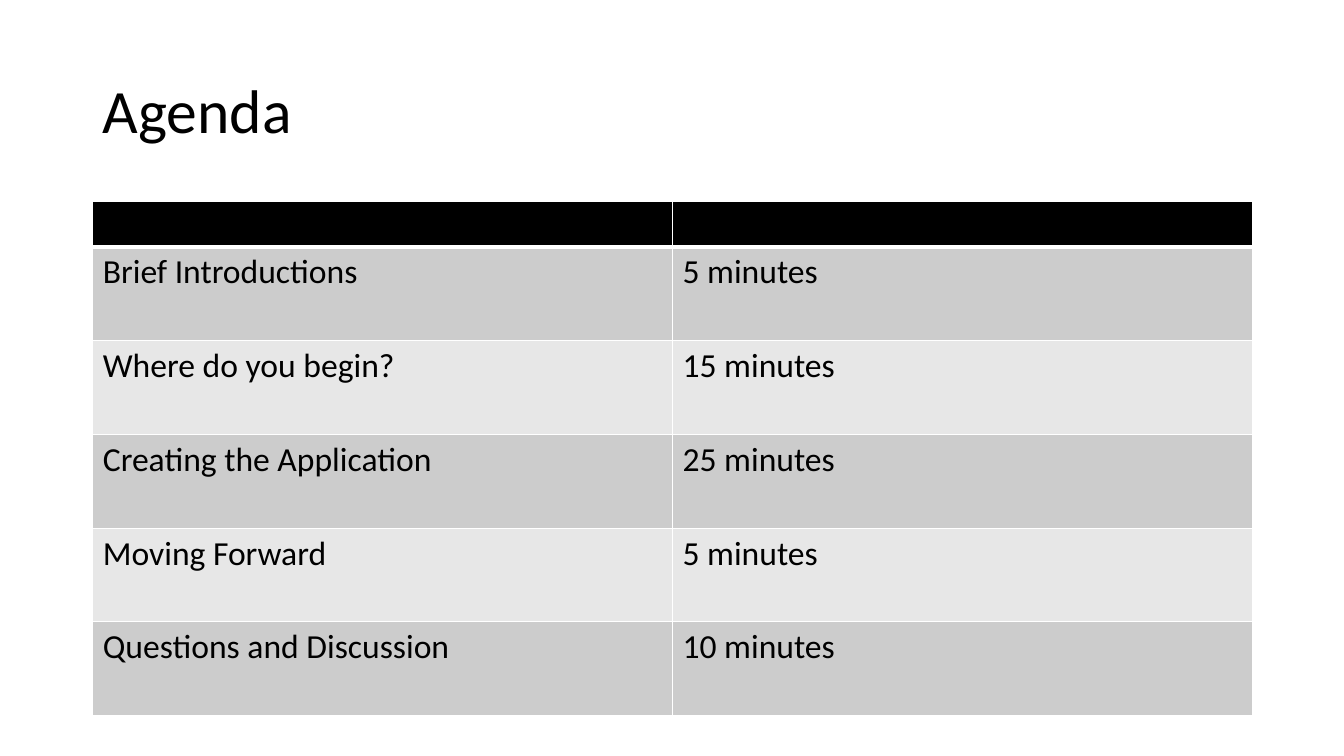
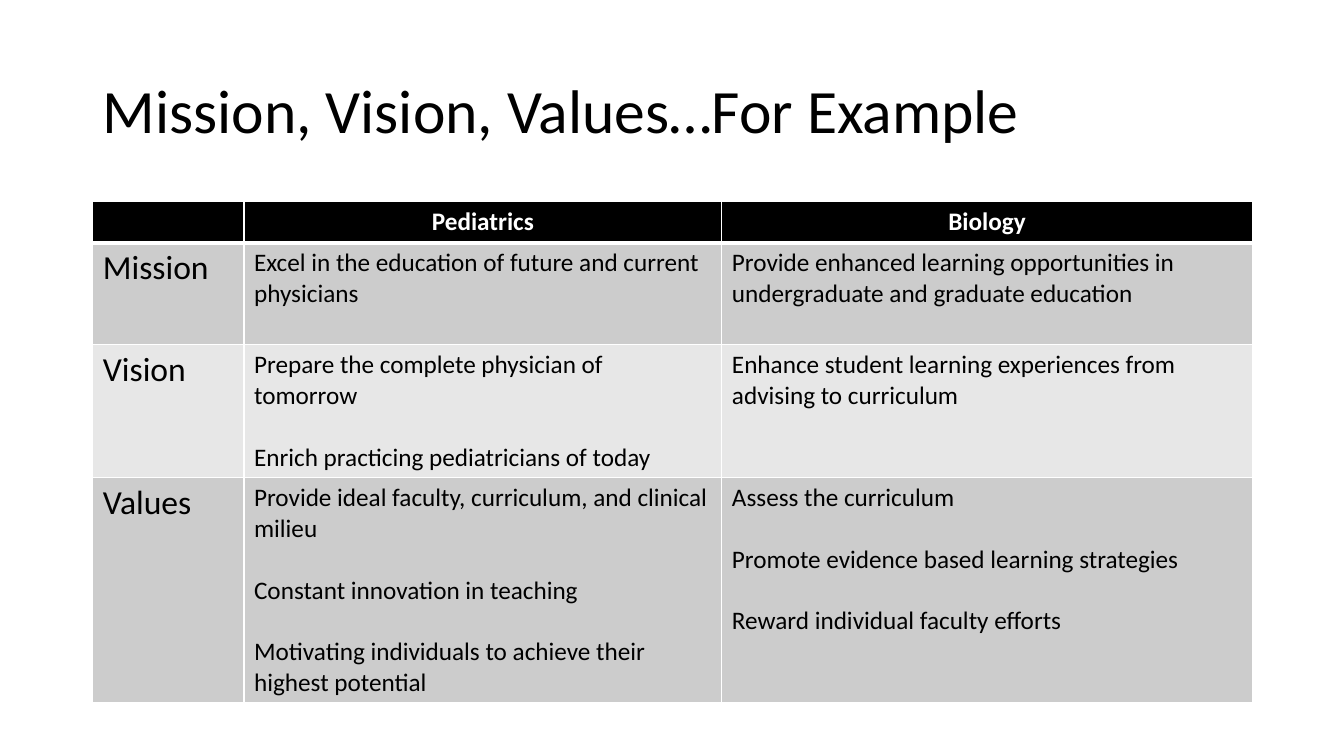
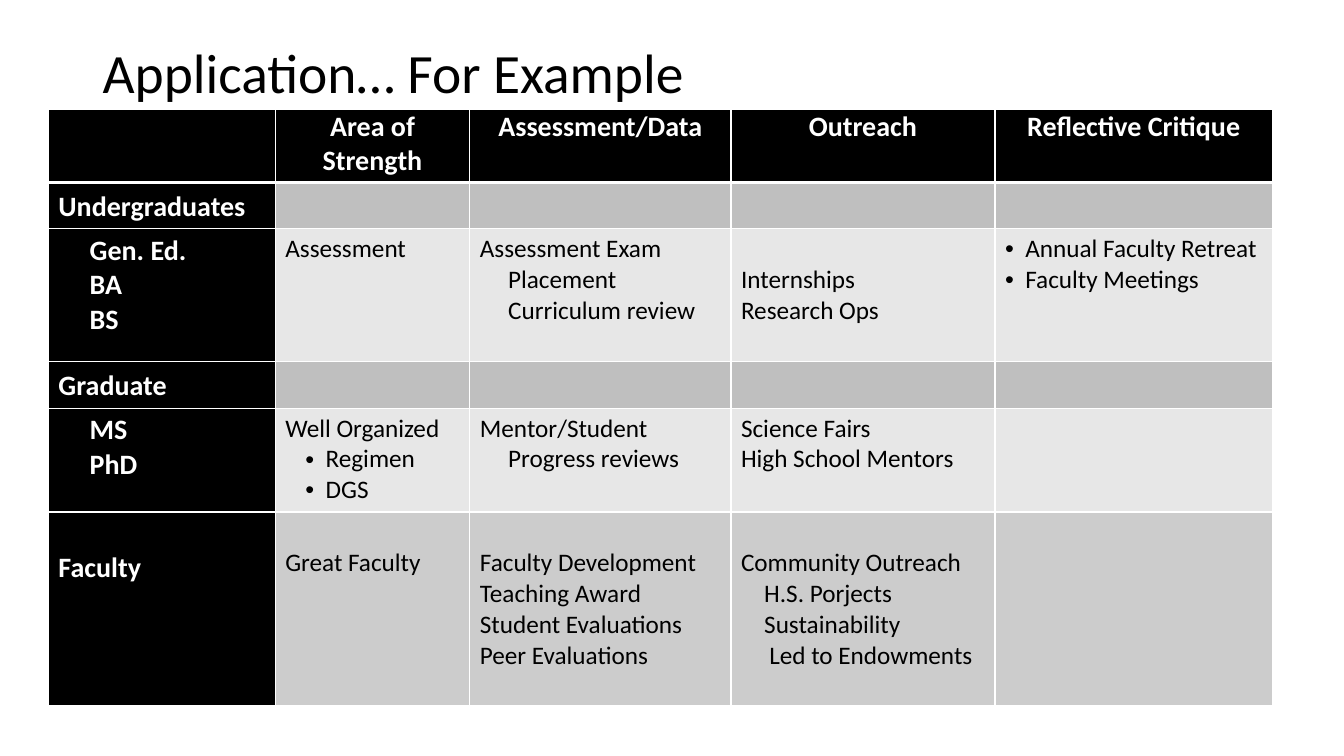
"""Build three slides on preparing an application: agenda, mission table, worked example."""
from collections import namedtuple
from dataclasses import dataclass

from lxml import etree
from pptx import Presentation
from pptx.dml.color import RGBColor
from pptx.enum.text import MSO_ANCHOR, PP_ALIGN
from pptx.oxml.ns import qn
from pptx.util import Inches, Pt

MIDDLE = MSO_ANCHOR.MIDDLE
LEFT, CENTER = PP_ALIGN.LEFT, PP_ALIGN.CENTER


@dataclass(frozen=True)
class Theme:
    font: str = "Calibri"
    black: str = "000000"
    white: str = "FFFFFF"
    dark_band: str = "CCCCCC"
    light_band: str = "E7E7E7"
    section_band: str = "BFBFBF"
    title: float = 44
    small_title: float = 39.6
    large: float = 24
    label: float = 20
    body: float = 18
    line_height: float = 1.22
    thin: float = 1
    thick: float = 3


THEME = Theme()
SLIDE_WIDTH, SLIDE_HEIGHT = 13.33, 7.5
MARGIN, CONTENT_WIDTH, TITLE_TOP, TABLE_TOP = 0.92, 11.5, 0.4, 2
CELL_TOP = 0.05

Line = namedtuple("Line", "text left hanging", defaults=(0, 0))
Look = namedtuple("Look", "size color bold align", defaults=(False, LEFT))

plain_large = Look(THEME.large, THEME.black)
plain_body = Look(THEME.body, THEME.black)
label_white = Look(THEME.label, THEME.white, True)
bands = [THEME.black, THEME.dark_band, THEME.light_band]

agenda = dict(
    title="Agenda", title_size=THEME.title, title_height=1.45,
    left=MARGIN, top=TABLE_TOP,
    columns=[CONTENT_WIDTH / 2] * 2, heights=[0.45] + [0.93] * 5,
    fills=bands + bands[1:] + bands[1:2],
    header=plain_large, first=plain_large, body=plain_large,
    rows=[
        [[], []],
        [["Brief Introductions"], ["5 minutes"]],
        [["Where do you begin?"], ["15 minutes"]],
        [["Creating the Application"], ["25 minutes"]],
        [["Moving Forward"], ["5 minutes"]],
        [["Questions and Discussion"], ["10 minutes"]],
    ],
)

mission = dict(
    title="Mission, Vision, Values…For Example", title_size=THEME.title, title_height=1.45,
    left=MARGIN, top=TABLE_TOP,
    columns=[1.5, 4.74, 5.26], heights=[0.41, 1.01, 1.32, 2.23],
    fills=bands + bands[1:2],
    header=Look(THEME.body, THEME.white, True, CENTER), first=plain_large, body=plain_body,
    gap=THEME.body * THEME.line_height,
    rows=[
        [[], ["Pediatrics"], ["Biology"]],
        [["Mission"],
         ["Excel in the education of future and current physicians"],
         ["Provide enhanced learning opportunities in undergraduate and graduate education"]],
        [["Vision"],
         ["Prepare the complete physician of tomorrow",
          "Enrich practicing pediatricians of today"],
         ["Enhance student learning experiences from advising to curriculum"]],
        [["Values"],
         ["Provide ideal faculty, curriculum, and clinical milieu",
          "Constant innovation in teaching",
          "Motivating individuals to achieve their highest potential"],
         ["Assess the curriculum", "Promote evidence based learning strategies",
          "Reward individual faculty efforts"]],
    ],
)

application = dict(
    title="Application… For Example", title_size=THEME.small_title, title_height=0.69,
    left=0.48, top=1.09,
    columns=[2.25, 1.93, 2.59, 2.62, 2.75], heights=[0.72, 0.46, 1.32, 0.46, 1.03, 1.92],
    fills=[THEME.black] + [THEME.section_band, THEME.light_band] * 2 + [THEME.dark_band],
    header=Look(THEME.label, THEME.white, True, CENTER), first=label_white, body=plain_body,
    first_fill=THEME.black, header_insets=(0.07, 0), sections=(1, 3),
    lowered={(2, 3), (5, 0), (5, 1), (5, 2), (5, 3)},
    rows=[
        [[], ["Area of Strength"], ["Assessment/Data"], ["Outreach"], ["Reflective Critique"]],
        [["Undergraduates"], [], [], [], []],
        [[Line("Gen. Ed.", 0.31), Line("BA", 0.31), Line("BS", 0.31)],
         ["Assessment"],
         ["Assessment Exam", Line("Placement", 0.28), Line("Curriculum review", 0.28)],
         ["Internships", "Research Ops"],
         [Line("Annual Faculty Retreat", 0.2, 0.2), Line("Faculty Meetings", 0.2, 0.2)]],
        [["Graduate"], [], [], [], []],
        [[Line("MS", 0.31), Line("PhD", 0.31)],
         ["Well Organized", Line("Regimen", 0.4, 0.2), Line("DGS", 0.4, 0.2)],
         ["Mentor/Student", Line("Progress reviews", 0.28)],
         ["Science Fairs", "High School Mentors"],
         []],
        [["Faculty"],
         ["Great Faculty"],
         ["Faculty Development", "Teaching Award", "Student Evaluations", "Peer Evaluations"],
         ["Community Outreach", Line("H.S. Porjects", 0.23), Line("Sustainability", 0.23),
          Line("Led to Endowments", 0.28)],
         []],
    ],
)


def write(para, line, look):
    """Fill one paragraph with a line of text, its indent and its look."""
    para.text = line.text
    para.alignment = look.align
    for span in para.runs:
        span.font.name = THEME.font
        span.font.size = Pt(look.size)
        span.font.bold = look.bold
        span.font.color.rgb = RGBColor.from_string(look.color)
    if line.left:
        properties = para._p.get_or_add_pPr()
        properties.set("marL", str(Inches(line.left)))
        properties.set("indent", str(-Inches(line.hanging)))
        if line.hanging:
            etree.SubElement(properties, qn("a:buFont"), typeface="Arial")
            etree.SubElement(properties, qn("a:buChar"), char="•")


def paint(cell, fill, top_width, bottom_width):
    """Give a cell its white borders and its solid fill."""
    properties = cell._tc.get_or_add_tcPr()
    widths = dict(lnL=THEME.thin, lnR=THEME.thin, lnT=top_width, lnB=bottom_width)
    for side, width in widths.items():
        border = etree.SubElement(properties, qn(f"a:{side}"), w=str(Pt(width)))
        solid = etree.SubElement(border, qn("a:solidFill"))
        etree.SubElement(solid, qn("a:srgbClr"), val=THEME.white)
    cell.fill.solid()
    cell.fill.fore_color.rgb = RGBColor.from_string(fill)


deck = Presentation()
deck.slide_width, deck.slide_height = Inches(SLIDE_WIDTH), Inches(SLIDE_HEIGHT)
blank = deck.slide_layouts[6]

for page in (agenda, mission, application):
    slide = deck.slides.add_slide(blank)
    box = slide.shapes.add_textbox(
        Inches(MARGIN), Inches(TITLE_TOP), Inches(CONTENT_WIDTH), Inches(page["title_height"]))
    box.text_frame.word_wrap = True
    box.text_frame.vertical_anchor = MIDDLE
    heading = box.text_frame.paragraphs[0]
    write(heading, Line(page["title"]), Look(page["title_size"], THEME.black))
    heading.line_spacing = 0.9

    columns, heights = page["columns"], page["heights"]
    table = slide.shapes.add_table(
        len(heights), len(columns), Inches(page["left"]), Inches(page["top"]),
        Inches(sum(columns)), Inches(sum(heights))).table
    table.horz_banding = False
    for column, width in zip(table.columns, columns):
        column.width = Inches(width)
    for row, height in zip(table.rows, heights):
        row.height = Inches(height)

    for r, cells in enumerate(page["rows"]):
        for c, lines in enumerate(cells):
            cell = table.cell(r, c)
            look = page["header"] if r == 0 else page["first"] if c == 0 else page["body"]
            fill = page.get("first_fill", page["fills"][r]) if c == 0 else page["fills"][r]
            paint(cell, fill,
                  THEME.thick if r == 1 else THEME.thin,
                  THEME.thick if r == 0 else THEME.thin)
            if r == 0 and "header_insets" in page:
                side, edge = page["header_insets"]
                cell.margin_left = cell.margin_right = Inches(side)
                cell.margin_top = cell.margin_bottom = Inches(edge)
            if (r, c) in page.get("lowered", ()):
                cell.margin_top = Inches(CELL_TOP) + Pt(look.size * THEME.line_height)
            for index, line in enumerate(lines):
                frame = cell.text_frame
                para = frame.add_paragraph() if index else frame.paragraphs[0]
                write(para, Line(line) if isinstance(line, str) else line, look)
                if index and "gap" in page:
                    para.space_before = Pt(page["gap"])
                if r in page.get("sections", ()):
                    para.line_spacing = 1.07

deck.save("out.pptx")
